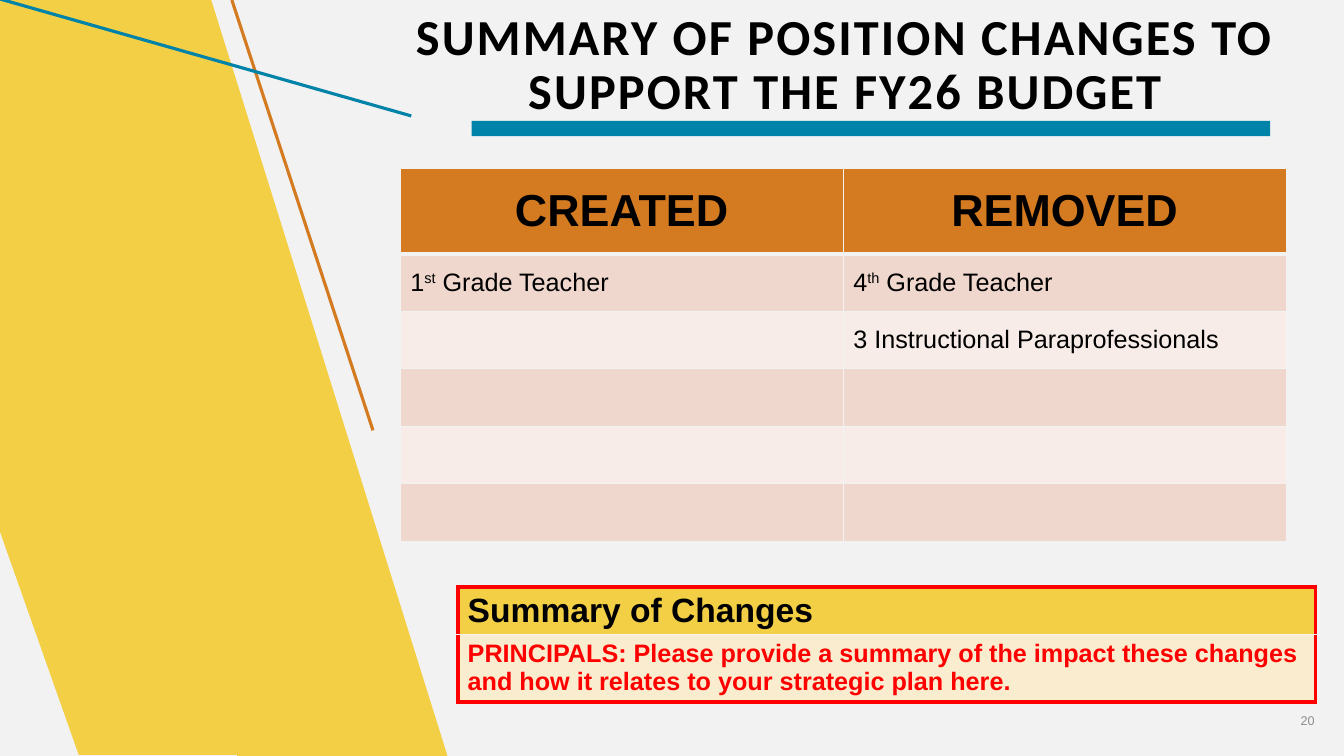
import pptx
import pptx.util
import pptx.dml.color
import pptx.enum.shapes
import pptx.enum.text
import pptx.oxml.ns
import lxml.etree

Pt = pptx.util.Pt
Rgb = pptx.dml.color.RGBColor.from_string
Kind = pptx.enum.shapes.MSO_SHAPE
Align = pptx.enum.text.PP_ALIGN
Mid = pptx.enum.text.MSO_ANCHOR.MIDDLE
Top = pptx.enum.text.MSO_ANCHOR.TOP
qn = pptx.oxml.ns.qn

theme = {
    "paper": "F2F2F2", "gold": "F3CF45", "blue": "0083A9", "rust": "D47B22",
    "dark": "EFD7CD", "light": "F7ECE8", "cream": "FAEDCF",
    "red": "FF0000", "black": "000000", "gray": "8C8C8C",
    "title": 36, "head": 32, "sub": 24, "body": 18, "small": 9,
}


def grid(*cells):
    """Turn grid columns and rows, ten to the inch, into lengths."""
    return [pptx.util.Inches(cell / 10) for cell in cells]


def write(para, runs, size, color="black", bold=False, face="Arial", align=Align.LEFT):
    """Add runs of (text, extra run marks) to a paragraph."""
    para.alignment = align
    for text, marks in runs:
        run = para.add_run()
        run.text = text
        form = {"name": face, "size": Pt(theme[size]), "bold": bold}
        for key, val in form.items():
            setattr(run.font, key, val)
        run.font.color.rgb = Rgb(theme[color])
        for key, val in marks.items():
            run._r.get_or_add_rPr().set(key, val)


deck = pptx.Presentation()
deck.slide_width, deck.slide_height = grid(133.33, 75)
slide = deck.slides.add_slide(deck.slide_layouts[5])
slide.background.fill.solid()
slide.background.fill.fore_color.rgb = Rgb(theme["paper"])
shapes = slide.shapes

# Side art and title bar, with the two lines between them in depth
art = [
    ("line", "rust", (37, 42.7, 23, 0)),
    (Kind.PARALLELOGRAM, "gold", (0, -0.3, 44.4, 75.3)),
    (Kind.RIGHT_TRIANGLE, "gold", (0, -0.4, 24.5, 75.3)),
    (Kind.RIGHT_TRIANGLE, "paper", (0, 52.8, 7.8, 22.1)),
    ("line", "blue", (40.8, 11.5, 0, -0.1)),
    (Kind.RECTANGLE, "blue", (46.8, 12, 79.2, 1.5)),
]
for kind, color, place in art:
    if kind == "line":
        line = shapes.add_connector(pptx.enum.shapes.MSO_CONNECTOR.STRAIGHT, *grid(*place))
        line.line.color.rgb = Rgb(theme[color])
        line.line.width = Pt(2.25)
        lxml.etree.SubElement(line._element.spPr, qn("a:effectLst"))
        continue
    shape = shapes.add_shape(kind, *grid(*place))
    shape.shadow.inherit = False
    shape.fill.solid()
    shape.fill.fore_color.rgb = Rgb(theme[color])
    shape.line.fill.background()
    if kind == Kind.PARALLELOGRAM:
        shape.adjustments[0] = 0.53
        shape._element.spPr.xfrm.set("flipH", "1")

# Title and page number
title = shapes.title
page = shapes.add_textbox(*grid(120.6, 69.5, 10.8, 4))
for key, val in zip(("left", "top", "width", "height"), grid(35.9, 0.9, 95.9, 11.3)):
    setattr(title, key, val)
for frame in (title.text_frame, page.text_frame):
    form = {"word_wrap": True, "vertical_anchor": Mid,
            "auto_size": pptx.enum.text.MSO_AUTO_SIZE.NONE}
    for key, val in form.items():
        setattr(frame, key, val)
para = title.text_frame.paragraphs[0]
para.line_spacing = 0.9
write(para, [("SUMMARY OF POSITION CHANGES TO SUPPORT THE FY26 BUDGET", {"spc": "150"})],
      "title", bold=True, face="Calibri", align=Align.CENTER)
write(page.text_frame.paragraphs[0], [("20", {})], "small", "gray", align=Align.RIGHT)

# Both tables: place, row heights, row fills, text, row formats, frame, head rule, anchor
raised = {"baseline": "30000"}
head = {"size": "head", "bold": True, "align": Align.CENTER}
body = {"size": "body"}
tables = [
    {
        "place": (39.7, 16.7, 87.9, 37), "rows": [8.5] + [5.7] * 5,
        "fills": ["rust"] + ["dark", "light"] * 2 + ["dark"],
        "text": [
            [[("CREATED", {})], [("REMOVED", {})]],
            [[("1", {}), ("st", raised), (" Grade Teacher", {})],
             [("4", {}), ("th", raised), (" Grade Teacher", {})]],
            [[], [("3 Instructional Paraprofessionals", {})]],
        ] + [[[], []]] * 3,
        "forms": [head] + [body] * 5,
        "frame": ("paper", 1), "rule": 3, "anchor": Mid,
    },
    {
        "place": (45.4, 58.2, 85.1, 11.4), "rows": [4.7, 6.7],
        "fills": ["gold", "cream"],
        "text": [
            [[("Summary of Changes", {})]],
            [[("PRINCIPALS: Please provide a summary of the impact these changes "
               "and how it relates to your strategic plan here.", {})]],
        ],
        "forms": [{"size": "sub", "bold": True},
                  {"size": "body", "bold": True, "color": "red"}],
        "frame": ("red", 3), "rule": 1, "anchor": Top,
    },
]
for plan in tables:
    rows, cols = len(plan["rows"]), len(plan["text"][0])
    table = shapes.add_table(rows, cols, *grid(*plan["place"])).table
    for r, tall in enumerate(plan["rows"]):
        table.rows[r].height = grid(tall)[0]
        for c, runs in enumerate(plan["text"][r]):
            cell = table.cell(r, c)
            cell.vertical_anchor = plan["anchor"]
            write(cell.text_frame.paragraphs[0], runs, **plan["forms"][r])
            # Outer sides take the frame, inner ones a thin paper rule
            frame, thin = plan["frame"], ("paper", 1)
            rule = ("paper", plan["rule"])
            sides = {
                "L": frame if c == 0 else thin,
                "R": frame if c == cols - 1 else thin,
                "T": frame if r == 0 else rule if r == 1 else thin,
                "B": frame if r == rows - 1 else rule if r == 0 else thin,
            }
            props = cell._tc.get_or_add_tcPr()
            for side, (color, width) in sides.items():
                edge = lxml.etree.SubElement(props, qn("a:ln" + side), w=str(Pt(width)))
                paint = lxml.etree.SubElement(edge, qn("a:solidFill"))
                lxml.etree.SubElement(paint, qn("a:srgbClr"), val=theme[color])
            cell.fill.solid()
            cell.fill.fore_color.rgb = Rgb(theme[plan["fills"][r]])

deck.save("out.pptx")
